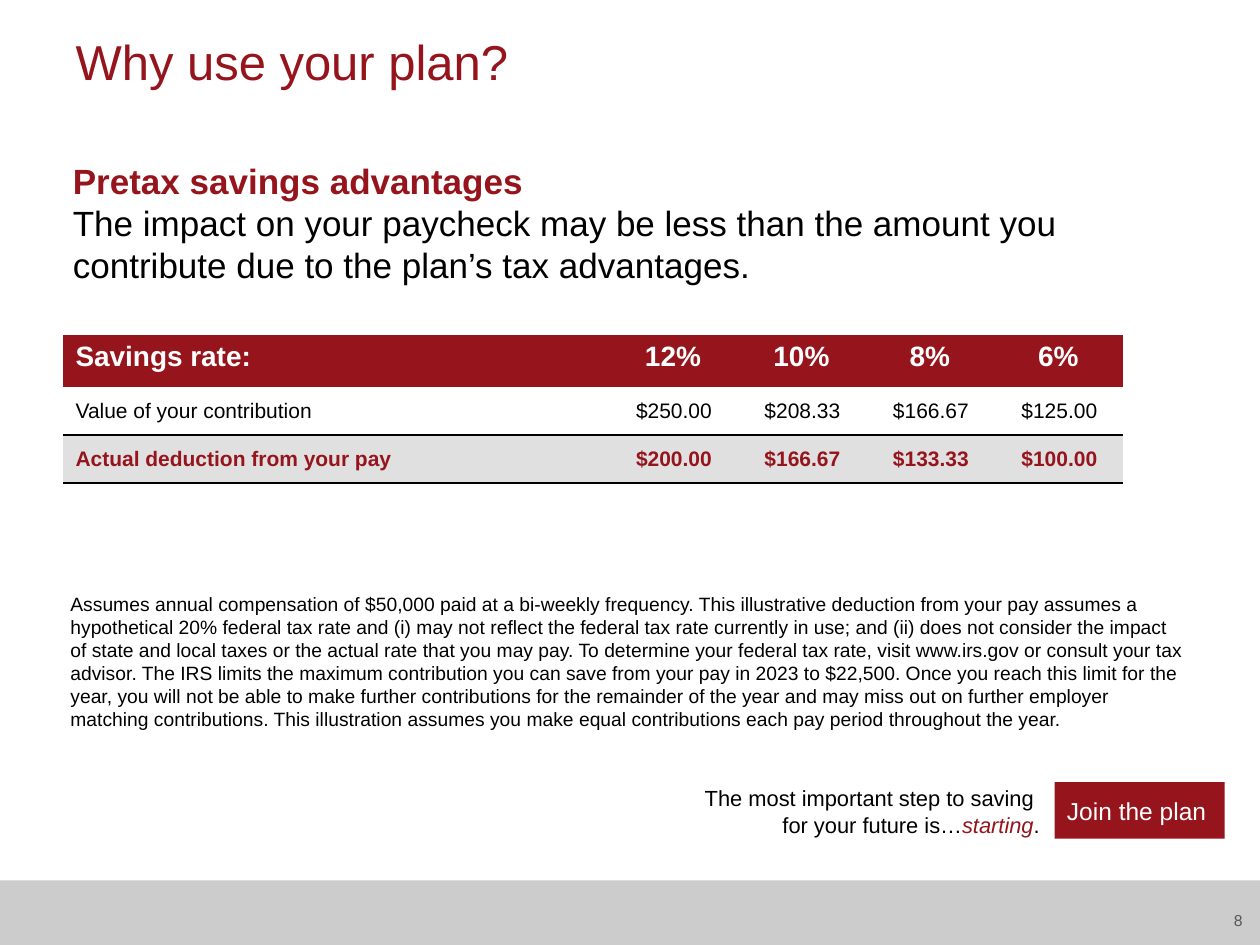
from dataclasses import dataclass

from lxml.etree import SubElement
from pptx import Presentation
from pptx.dml.color import RGBColor
from pptx.enum.shapes import MSO_SHAPE
from pptx.enum.text import MSO_ANCHOR, PP_ALIGN
from pptx.oxml.ns import qn
from pptx.util import Cm, Pt


@dataclass(frozen=True)
class Theme:
    font: str = "Arial"
    red: str = "96151D"
    black: str = "000000"
    white: str = "FFFFFF"
    band: str = "CCCCCC"
    shade: str = "E0E0E0"
    grey: str = "53565A"
    title: float = 28
    lead: float = 20
    header: float = 16
    button: float = 14
    step: float = 12.5
    cell: float = 12
    note: float = 11
    number: float = 9


THEME = Theme()
NO_GRID_STYLE = "{2D5ABB26-0587-4C30-8999-92F81FD0307C}"


def add_span(para, text, size=THEME.cell, color=THEME.black, bold=False, italic=False):
    """Add formatted text to a paragraph, with a line break at each newline."""
    for index, line in enumerate(text.split("\n")):
        if index:
            para.add_line_break()
        if not line:
            continue
        span = para.add_run()
        span.text = line
        font = span.font
        font.name, font.size = THEME.font, Pt(size)
        font.bold, font.italic = bold, italic
        font.color.rgb = RGBColor.from_string(color)


def fill_solid(target, color):
    target.fill.solid()
    target.fill.fore_color.rgb = RGBColor.from_string(color)


def add_bottom_border(cell, color=THEME.black, width=1):
    line = SubElement(cell._tc.get_or_add_tcPr(), qn("a:lnB"), w=str(Pt(width)))
    fill = SubElement(line, qn("a:solidFill"))
    SubElement(fill, qn("a:srgbClr"), val=color)


class SlideBuilder:
    def __init__(self, page, theme):
        self.page = page
        self.theme = theme

    def title(self, text, left, top, width, height):
        box = self.page.shapes.title
        box.left, box.top, box.width, box.height = map(Cm, (left, top, width, height))
        box.text_frame.vertical_anchor = MSO_ANCHOR.TOP
        para = box.text_frame.paragraphs[0]
        para.alignment = PP_ALIGN.LEFT
        para.line_spacing = Pt(30)
        add_span(para, text, size=self.theme.title, color=self.theme.red)

    def text(self, spans, left, top, width, height,
             align=PP_ALIGN.LEFT, anchor=MSO_ANCHOR.TOP):
        """Add a text box; spans is a list of (text, format) pairs."""
        box = self.page.shapes.add_textbox(*map(Cm, (left, top, width, height)))
        frame = box.text_frame
        frame.word_wrap = True
        frame.vertical_anchor = anchor
        para = frame.paragraphs[0]
        para.alignment = align
        for text, style in spans:
            add_span(para, text, **style)

    def rectangle(self, color, left, top, width, height):
        box = self.page.shapes.add_shape(
            MSO_SHAPE.RECTANGLE, *map(Cm, (left, top, width, height)))
        box.shadow.inherit = False
        fill_solid(box, color)
        box.line.fill.background()
        return box

    def button(self, text, left, top, width, height):
        box = self.rectangle(self.theme.red, left, top, width, height)
        para = box.text_frame.paragraphs[0]
        para.alignment = PP_ALIGN.LEFT
        add_span(para, text, size=self.theme.button, color=self.theme.white)

    def savings_table(self, rows, left, top, column_widths, row_heights):
        """Add a table with a red header row and a highlighted last row."""
        theme = self.theme
        frame = self.page.shapes.add_table(
            len(rows), len(column_widths), Cm(left), Cm(top),
            Cm(sum(column_widths)), Cm(sum(row_heights)))
        table = frame.table
        table.first_row = table.horz_banding = False
        table._tbl.tblPr.find(qn("a:tableStyleId")).text = NO_GRID_STYLE
        for column, width in zip(table.columns, column_widths):
            column.width = Cm(width)
        for row, height in zip(table.rows, row_heights):
            row.height = Cm(height)

        row_styles = [
            (theme.red, dict(size=theme.header, color=theme.white, bold=True)),
            (theme.white, dict()),
            (theme.shade, dict(color=theme.red, bold=True)),
        ]
        for row_index, (values, (fill, style)) in enumerate(zip(rows, row_styles)):
            is_header = row_index == 0
            for column_index, value in enumerate(values):
                cell = table.cell(row_index, column_index)
                para = cell.text_frame.paragraphs[0]
                if column_index:
                    para.alignment = PP_ALIGN.CENTER if is_header else PP_ALIGN.RIGHT
                if not is_header:
                    cell.vertical_anchor = MSO_ANCHOR.MIDDLE
                    if column_index:
                        cell.margin_right = Cm(0.51)
                    add_bottom_border(cell)
                fill_solid(cell, fill)
                add_span(para, value, **style)


def main():
    deck = Presentation()
    deck.slide_width, deck.slide_height = Cm(25.4), Cm(19.05)
    page = deck.slides.add_slide(deck.slide_layouts[5])
    builder = SlideBuilder(page, THEME)

    builder.rectangle(THEME.band, 0, 17.75, 25.4, 1.3)
    builder.title("Why use your plan?", 1.27, 0.64, 22.86, 1.7)
    builder.text([
        ("Pretax savings advantages\n",
         dict(size=THEME.lead, color=THEME.red, bold=True)),
        ("The impact on your paycheck may be less than the amount you contribute "
         "due to the plan’s tax advantages.", dict(size=THEME.lead)),
    ], 1.22, 3.1, 23.01, 3.1)

    builder.savings_table([
        ("Savings rate:", "12%", "10%", "8%", "6%"),
        ("Value of your contribution", "$250.00", "$208.33", "$166.67", "$125.00"),
        ("Actual deduction from your pay", "$200.00", "$166.67", "$133.33", "$100.00"),
    ], 1.27, 6.76, [11] + [2.59] * 4, [1.04, 0.97, 0.97])

    builder.text([(
        "Assumes annual compensation of $50,000 paid at a bi-weekly frequency. "
        "This illustrative deduction from your pay assumes a hypothetical 20% federal "
        "tax rate and (i) may not reflect the federal tax rate currently in use; and "
        "(ii) does not consider the impact of state and local taxes or the actual rate "
        "that you may pay. To determine your federal tax rate, visit www.irs.gov or "
        "consult your tax advisor. The IRS limits the maximum contribution you can save "
        "from your pay in 2023 to $22,500. Once you reach this limit for the year, you "
        "will not be able to make further contributions for the remainder of the year "
        "and may miss out on further employer matching contributions. This illustration "
        "assumes you make equal contributions each pay period throughout the year.",
        dict(size=THEME.note))], 1.17, 11.81, 23.06, 3.07)

    builder.text([
        ("The most important step to saving \nfor your future is…", dict(size=THEME.step)),
        ("starting", dict(size=THEME.step, color=THEME.red, italic=True)),
        (".", dict(size=THEME.step)),
    ], 13.67, 15.7, 7.54, 1.32, align=PP_ALIGN.RIGHT)
    builder.button("Join the plan", 21.26, 15.77, 3.43, 1.14)
    builder.text([("8", dict(size=THEME.number, color=THEME.grey))],
                 24.13, 18.01, 1.17, 1.09,
                 align=PP_ALIGN.RIGHT, anchor=MSO_ANCHOR.MIDDLE)

    deck.save("out.pptx")


if __name__ == "__main__":
    main()
